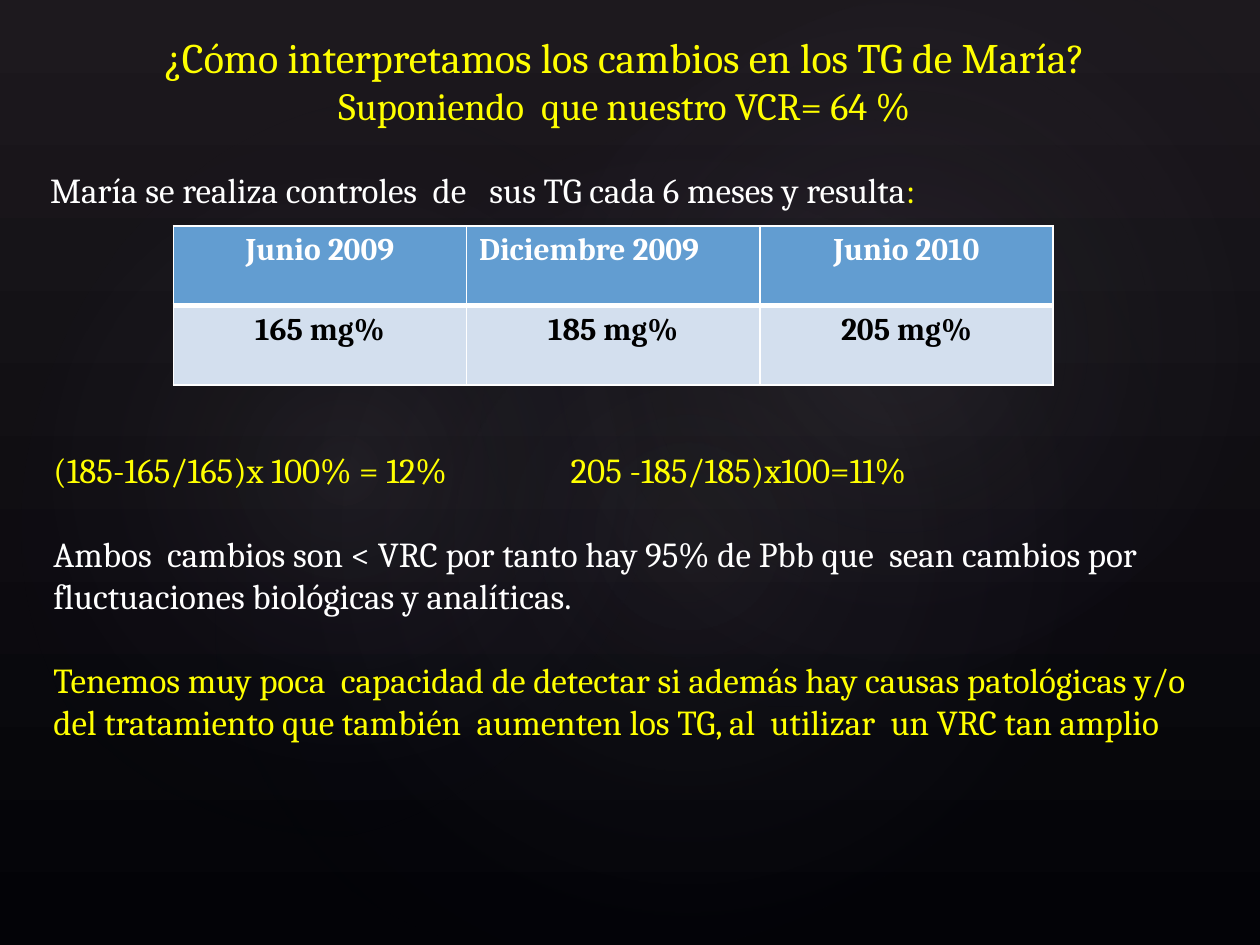
from pptx import Presentation
from pptx.dml.color import RGBColor
from pptx.enum.shapes import MSO_SHAPE
from pptx.enum.text import MSO_ANCHOR, MSO_AUTO_SIZE, PP_ALIGN
from pptx.oxml import parse_xml
from pptx.oxml.ns import nsdecls, qn
from pptx.util import Pt

OVAL = MSO_SHAPE.OVAL
TOP, MIDDLE = MSO_ANCHOR.TOP, MSO_ANCHOR.MIDDLE
CENTER, LEFT = PP_ALIGN.CENTER, PP_ALIGN.LEFT
NO_AUTOFIT = MSO_AUTO_SIZE.NONE

FONT = "Cambria"
WHITE = RGBColor(0xFF, 0xFF, 0xFF)
BLACK = RGBColor(0x00, 0x00, 0x00)
YELLOW = RGBColor(0xFF, 0xFF, 0x00)
HEADER_BLUE = RGBColor(0x62, 0x9D, 0xD1)
ROW_BLUE = RGBColor(0xD3, 0xDF, 0xEE)
NIGHT_TOP = RGBColor(0x1D, 0x19, 0x1E)
NIGHT_BOTTOM = RGBColor(0x03, 0x03, 0x07)
GLOW = RGBColor(0xC4, 0xBC, 0xC6)
GLOW_EDGE = RGBColor(0x24, 0x28, 0x52)

GLOWS = [
    ((108, 82, 570, 449), 328.7, 7),
    ((-21.6, 92, 436, 353), 294.3, 8),
    ((258, 9.4, 510, 374), 328.7, 8),
]
TITLE_LINES = [
    ("¿Cómo interpretamos los cambios en los TG de María?", 24),
    ("Suponiendo  que nuestro VCR= 64 %", 22),
]
INTRODUCTION = "María se realiza controles  de   sus TG cada 6 meses y resulta"
RESULTS = [
    ["Junio 2009", "Diciembre 2009", "Junio 2010"],
    ["165 mg%", "185 mg%", "205 mg%"],
]
CONCLUSIONS = [
    ("(185-165/165)x 100% = 12%\t205 -185/185)x100=11%", YELLOW),
    ("Ambos  cambios son < VRC por tanto hay 95% de Pbb que  sean cambios por  "
     "fluctuaciones biológicas y analíticas.", WHITE),
    ("Tenemos muy poca  capacidad de detectar si además hay causas patológicas y/o "
     "del tratamiento que también  aumenten los TG, al  utilizar  un VRC tan amplio", YELLOW),
]


def place(shape, box):
    """Move and size a shape to a box of left, top, width and height in points."""
    shape.left, shape.top, shape.width, shape.height = map(Pt, box)


def format_paragraph(paragraph, size, color, alignment=LEFT, bold=False):
    """Set the font and alignment of a whole paragraph."""
    paragraph.alignment = alignment
    paragraph.font.name = FONT
    paragraph.font.size = Pt(size)
    paragraph.font.bold = bold
    paragraph.font.color.rgb = color


def prepare_frame(frame, anchor):
    """Give a text frame wrapping, a fixed size and an anchor."""
    frame.word_wrap = True
    frame.auto_size = NO_AUTOFIT
    frame.vertical_anchor = anchor


def add_glow(slide, box, rotation, opacity):
    """Add a faint radial glow behind everything on the slide."""
    shape = slide.shapes.add_shape(OVAL, *map(Pt, box))
    shape.rotation = rotation
    shape.shadow.inherit = False
    shape.line.fill.background()
    shape.fill.gradient()
    gradient = parse_xml(
        f'<a:gradFill {nsdecls("a")} rotWithShape="1"><a:gsLst>'
        f'<a:gs pos="0"><a:srgbClr val="{GLOW}"><a:alpha val="{opacity * 1000}"/></a:srgbClr></a:gs>'
        f'<a:gs pos="58000"><a:srgbClr val="{GLOW_EDGE}"><a:alpha val="0"/></a:srgbClr></a:gs>'
        '</a:gsLst><a:path path="circle">'
        '<a:fillToRect l="50000" t="50000" r="50000" b="50000"/></a:path></a:gradFill>')
    properties = shape._element.spPr
    properties.replace(properties.find(qn("a:gradFill")), gradient)
    slide.shapes._spTree.insert(2, shape._element)


def paint_background(slide):
    """Paint the dark vertical gradient and its glows."""
    fill = slide.background.fill
    fill.gradient()
    fill.gradient_angle = 270
    for stop, color in zip(fill.gradient_stops, (NIGHT_TOP, NIGHT_BOTTOM)):
        stop.color.rgb = color
    for box, rotation, opacity in reversed(GLOWS):
        add_glow(slide, box, rotation, opacity)


def fill_title(slide, box):
    """Write the two-line title."""
    title = slide.shapes.title
    place(title, box)
    frame = title.text_frame
    prepare_frame(frame, MIDDLE)
    frame.text = "\n".join(text for text, _ in TITLE_LINES)
    for paragraph, (_, size) in zip(frame.paragraphs, TITLE_LINES):
        format_paragraph(paragraph, size, YELLOW, CENTER)


def fill_introduction(slide, box):
    """Write the sentence that leads to the table."""
    body = slide.placeholders[1]
    place(body, box)
    frame = body.text_frame
    prepare_frame(frame, TOP)
    frame.margin_left = Pt(8.6)
    frame.margin_top = Pt(18)
    paragraph = frame.paragraphs[0]
    paragraph.space_before = Pt(0)
    format_paragraph(paragraph, 20, WHITE)
    properties = paragraph._p.get_or_add_pPr()
    properties.set("marL", "0")
    properties.set("indent", "0")
    properties.insert_element_before(
        parse_xml(f'<a:buNone {nsdecls("a")}/>'), "a:tabLst", "a:defRPr", "a:extLst")
    paragraph.add_run().text = INTRODUCTION
    colon = paragraph.add_run()
    colon.text = ":"
    colon.font.color.rgb = YELLOW


def set_borders(cell, widths):
    """Draw white cell borders of the given widths for left, right, top and bottom."""
    properties = cell._tc.get_or_add_tcPr()
    for side, width in zip("LRTB", widths):
        properties.append(parse_xml(
            f'<a:ln{side} {nsdecls("a")} w="{Pt(width)}"><a:solidFill>'
            f'<a:srgbClr val="{WHITE}"/></a:solidFill></a:ln{side}>'))


def add_results_table(slide, box):
    """Add the table of dated triglyceride results."""
    table = slide.shapes.add_table(len(RESULTS), len(RESULTS[0]), *map(Pt, box)).table
    styles = [(HEADER_BLUE, WHITE, (1, 1, 1, 3)), (ROW_BLUE, BLACK, (1, 1, 3, 1))]
    for row, texts, (fill, color, widths) in zip(table.rows, RESULTS, styles):
        for cell, text in zip(row.cells, texts):
            set_borders(cell, widths)
            cell.fill.solid()
            cell.fill.fore_color.rgb = fill
            cell.text = text
            alignment = LEFT if text == "Diciembre 2009" else CENTER
            format_paragraph(cell.text_frame.paragraphs[0], 18, color, alignment, True)


def add_conclusions(slide, box):
    """Add the calculations and what follows from them."""
    frame = slide.shapes.add_textbox(*map(Pt, box)).text_frame
    prepare_frame(frame, TOP)
    frame.margin_left = Pt(8.6)
    frame.text = "\n".join(text for text, _ in CONCLUSIONS)
    for paragraph, (_, color) in zip(frame.paragraphs, CONCLUSIONS):
        format_paragraph(paragraph, 20, color)
    for paragraph in frame.paragraphs[1:]:
        paragraph.space_before = Pt(24)
    properties = frame.paragraphs[0]._p.get_or_add_pPr()
    properties.insert_element_before(
        parse_xml(f'<a:tabLst {nsdecls("a")}><a:tab pos="{Pt(295.5)}" algn="l"/></a:tabLst>'),
        "a:defRPr", "a:extLst")


def main():
    """Build and save the presentation."""
    presentation = Presentation()
    presentation.slide_width, presentation.slide_height = Pt(720), Pt(540)
    slide = presentation.slides.add_slide(presentation.slide_layouts[1])
    paint_background(slide)
    fill_title(slide, (47.5, 13, 618.5, 65.5))
    fill_introduction(slide, (20, 78.5, 680.5, 446.5))
    add_results_table(slide, (99, 129.25, 502.8, 90.8))
    add_conclusions(slide, (22, 252.7, 678.5, 287))
    presentation.save("out.pptx")


if __name__ == "__main__":
    main()
